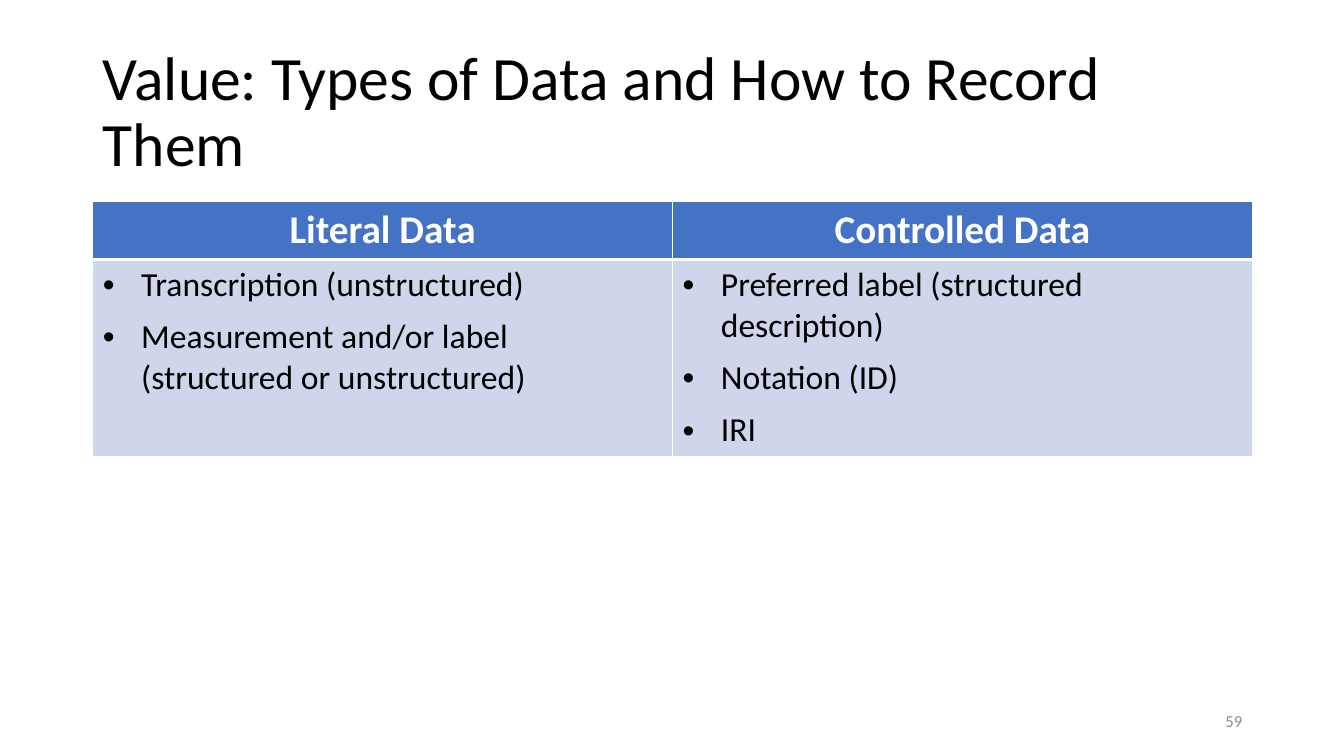
"""Build a slide with a table of literal and controlled data types."""
from lxml import etree
from pptx import Presentation
from pptx.dml.color import RGBColor
from pptx.enum.text import MSO_ANCHOR, MSO_AUTO_SIZE, PP_ALIGN
from pptx.oxml.ns import qn
from pptx.util import Inches, Pt

LEFT, CENTER, RIGHT = PP_ALIGN.LEFT, PP_ALIGN.CENTER, PP_ALIGN.RIGHT
MIDDLE = MSO_ANCHOR.MIDDLE
NOFIT = MSO_AUTO_SIZE.NONE
EDGES = ("lnL", "lnR", "lnT", "lnB")
COLUMNS = {
    "Literal Data": [
        "Transcription (unstructured)",
        "Measurement and/or label (structured or unstructured)",
    ],
    "Controlled Data": [
        "Preferred label (structured description)",
        "Notation (ID)",
        "IRI",
    ],
}


def style(para, size, color, align=LEFT, bold=False):
    para.alignment = align
    font = para.font
    font.name, font.size, font.bold = "Calibri", Pt(size), bold
    font.color.rgb = RGBColor.from_string(color)


def paint(cell, color, base):
    cell.fill.solid()
    cell.fill.fore_color.rgb = RGBColor.from_string(color)
    props = cell._tc.get_or_add_tcPr()
    for spot, edge in enumerate(EDGES):
        width = base if edge == "lnB" else 1
        line = etree.Element(qn("a:" + edge), w=str(Pt(width)))
        fill = etree.SubElement(line, qn("a:solidFill"))
        etree.SubElement(fill, qn("a:srgbClr"), val="FFFFFF")
        props.insert(spot, line)


deck = Presentation()
deck.slide_width, deck.slide_height = Inches(13.33), Inches(7.5)
slide = deck.slides.add_slide(deck.slide_layouts[5])

title = slide.shapes.title
title.left, title.top = Inches(0.92), Inches(0.4)
title.width, title.height = Inches(11.5), Inches(1.45)
frame = title.text_frame
frame.text = "Value: Types of Data and How to Record Them"
frame.word_wrap, frame.auto_size = True, NOFIT
frame.vertical_anchor = MIDDLE
frame.paragraphs[0].line_spacing = 0.9
style(frame.paragraphs[0], 44, "000000")

table = slide.shapes.add_table(
    2, len(COLUMNS), Inches(0.92), Inches(2), Inches(11.5), Inches(2.49)
).table
table.rows[0].height, table.rows[1].height = Inches(0.57), Inches(1.92)
for col, (head, items) in enumerate(COLUMNS.items()):
    top, body = table.cell(0, col), table.cell(1, col)
    paint(top, "4472C4", 3)
    paint(body, "CFD5EA", 1)
    top.text = head
    style(top.text_frame.paragraphs[0], 28, "FFFFFF", CENTER, True)
    body.text = "\n".join(items)
    for para in body.text_frame.paragraphs:
        para.space_before = Pt(8)
        props = para._p.get_or_add_pPr()
        props.set("marL", str(Inches(0.38)))
        props.set("indent", str(-Inches(0.38)))
        etree.SubElement(props, qn("a:buFont"), typeface="Arial")
        etree.SubElement(props, qn("a:buChar"), char="•")
        style(para, 24, "000000")

number = slide.shapes.add_textbox(
    Inches(9.42), Inches(6.95), Inches(3), Inches(0.4)
).text_frame
number.text = "59"
number.word_wrap, number.vertical_anchor = True, MIDDLE
style(number.paragraphs[0], 12, "8C8C8C", RIGHT)

deck.save("out.pptx")
